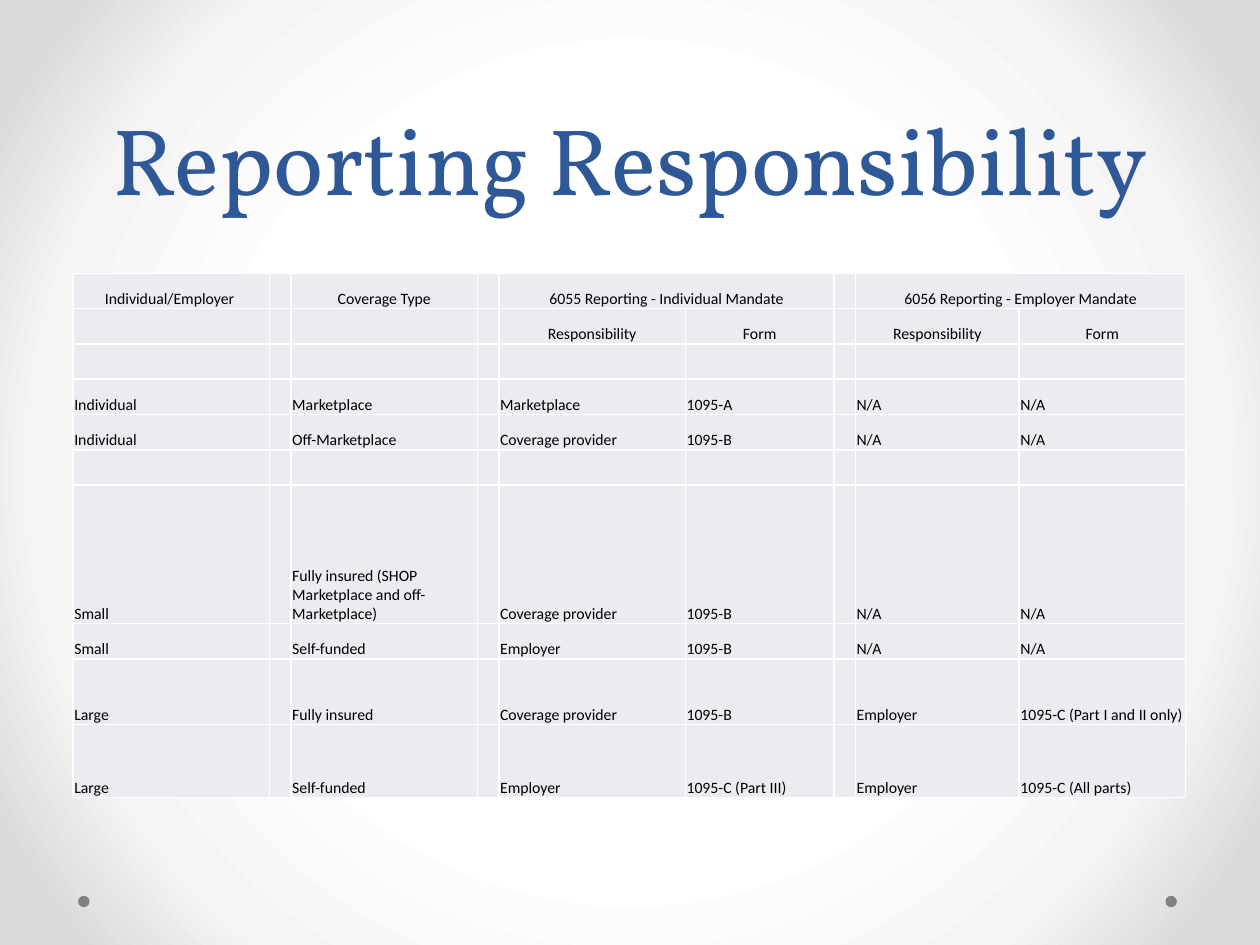
from lxml import etree
from pptx import Presentation
from pptx import util as u
from pptx.dml.color import RGBColor
from pptx.enum import shapes, text
from pptx.oxml import parse_xml
from pptx.oxml.ns import nsdecls, qn

COLORS = {"title": "2F5897", "cell": "EAECF2", "border": "FFFFFF", "ink": "000000", "dot": "808080"}
BACKDROP = {50: "FFFFFF", 76: "F4F4F4", 92: "DADADA"}
COLUMNS = [1.56, 0.17, 1.48, 0.17, 1.48, 1.18, 0.17, 1.3, 1.32]
ROWS = [0.28] * 6 + [1.1, 0.28, 0.52, 0.58]
FILLED_COLUMNS = [0, 2, 4, 5, 7, 8]
HEADER_ROWS = 2
CONTENT = [
    ["Individual/Employer ", "Coverage Type", "6055 Reporting - Individual Mandate", "",
     "6056 Reporting - Employer Mandate", ""],
    ["", "", "Responsibility", "Form", "Responsibility", "Form"],
    [],
    ["Individual", "Marketplace", "Marketplace", "1095-A", "N/A", "N/A"],
    ["Individual", "Off-Marketplace", "Coverage provider", "1095-B", "N/A", "N/A"],
    [],
    ["Small", "Fully insured (SHOP Marketplace and off-Marketplace)", "Coverage provider", "1095-B",
     "N/A", "N/A"],
    ["Small", "Self-funded", "Employer", "1095-B", "N/A", "N/A"],
    ["Large", "Fully insured", "Coverage provider", "1095-B", "Employer", "1095-C (Part I and II only)"],
    ["Large", "Self-funded", "Employer", "1095-C (Part III)", "Employer", "1095-C (All parts)"],
]


def add_span(para, words, font, size, color):
    span = para.add_run()
    span.text = words
    span.font.name, span.font.size = font, u.Pt(size)
    span.font.color.rgb = RGBColor.from_string(COLORS[color])


deck = Presentation()
deck.slide_width, deck.slide_height = u.Inches(10), u.Inches(7.5)
page = deck.slides.add_slide(deck.slide_layouts[6])

# Radial backdrop
stops = "".join(f'<a:gs pos="{share * 1000}"><a:srgbClr val="{color}"/></a:gs>'
                for share, color in BACKDROP.items())
page.element.cSld.insert(0, parse_xml(
    f'<p:bg {nsdecls("p", "a")}><p:bgPr><a:gradFill rotWithShape="1"><a:gsLst>{stops}</a:gsLst>'
    '<a:path path="circle"><a:fillToRect l="50000" t="50000" r="50000" b="50000"/></a:path>'
    '</a:gradFill><a:effectLst/></p:bgPr></p:bg>'))

# Corner dots
for left in (9.25, 0.62):
    dot = page.shapes.add_shape(shapes.MSO_SHAPE.OVAL, u.Inches(left), u.Inches(7.11),
                                u.Inches(0.09), u.Inches(0.09))
    dot.shadow.inherit = False
    dot.fill.solid()
    dot.fill.fore_color.rgb = RGBColor.from_string(COLORS["dot"])
    dot.line.fill.background()

# Title
title = page.shapes.add_textbox(u.Inches(0.5), 0, u.Inches(9), u.Inches(1.75))
title.text_frame.word_wrap = True
title.text_frame.vertical_anchor = text.MSO_ANCHOR.BOTTOM
heading = title.text_frame.paragraphs[0]
heading.alignment = text.PP_ALIGN.CENTER
heading.line_spacing = u.Pt(58)
add_span(heading, "Reporting Responsibility", "Vollkorn", 54, "title")

# Reporting table
table = page.shapes.add_table(len(ROWS), len(COLUMNS), u.Inches(0.58), u.Inches(2.17),
                              u.Inches(sum(COLUMNS)), u.Inches(sum(ROWS))).table
table.first_row = table.horz_banding = False
for column, width in zip(table.columns, COLUMNS):
    column.width = u.Inches(width)
for row, height in zip(table.rows, ROWS):
    row.height = u.Inches(height)

CELL_FORMAT = {"margin_left": u.Inches(0.01), "margin_right": u.Inches(0.01),
               "margin_top": u.Inches(0.01), "margin_bottom": 0,
               "vertical_anchor": text.MSO_ANCHOR.BOTTOM}
for row_index, row_words in enumerate(CONTENT):
    words_at = dict(zip(FILLED_COLUMNS, row_words))
    for column_index in range(len(COLUMNS)):
        cell = table.cell(row_index, column_index)
        for name, value in CELL_FORMAT.items():
            setattr(cell, name, value)
        for side in ("lnL", "lnR", "lnT", "lnB"):
            cell._tc.get_or_add_tcPr().append(parse_xml(
                f'<a:{side} {nsdecls("a")} w="12700"><a:solidFill><a:srgbClr val="{COLORS["border"]}"/>'
                f'</a:solidFill></a:{side}>'))
        cell.fill.solid()
        cell.fill.fore_color.rgb = RGBColor.from_string(COLORS["cell"])
        para = cell.text_frame.paragraphs[0]
        if row_index < HEADER_ROWS:
            para.alignment = text.PP_ALIGN.CENTER
        if words_at.get(column_index):
            add_span(para, words_at[column_index], "Calibri", 9, "ink")
        else:  # keeps an empty cell from stretching its row
            etree.SubElement(para._p, qn("a:endParaRPr"), sz="900")
for first, last in ((4, 5), (7, 8)):
    table.cell(0, first).merge(table.cell(0, last))

deck.save("out.pptx")
